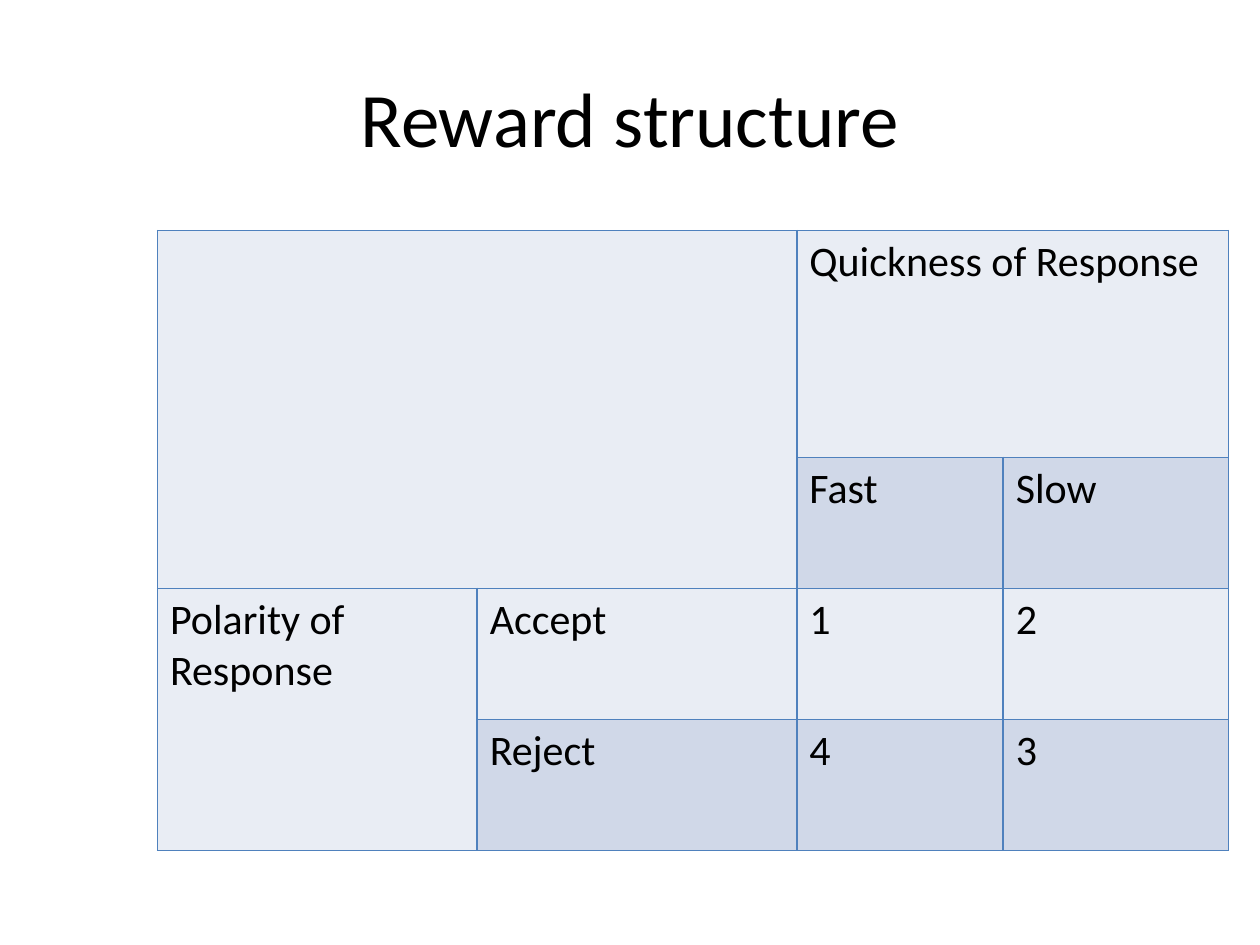
from lxml.etree import SubElement
from pptx import Presentation
from pptx.dml.color import RGBColor
from pptx.enum.text import MSO_ANCHOR, PP_ALIGN
from pptx.oxml.ns import qn
from pptx.util import Inches, Pt

COLORS = {"text": "000000", "border": "4F81BD", "light": "E9EDF4", "dark": "D0D8E8"}
FONT = "Calibri"
COLUMN_WIDTHS = [2.54, 2.54, 1.64, 1.79]
ROW_HEIGHTS = [1.8, 1.04, 1.04, 1.04]
MERGES = [((0, 0), (1, 1)), ((0, 2), (0, 3)), ((2, 0), (3, 0))]
REWARDS = [
    ["", "", "Quickness of Response", ""],
    ["", "", "Fast", "Slow"],
    ["Polarity of Response", "Accept", "1", "2"],
    ["", "Reject", "4", "3"],
]


def add_span(para, text, size):
    span = para.add_run()
    span.text = text
    span.font.name = FONT
    span.font.size = Pt(size)
    span.font.color.rgb = RGBColor.from_string(COLORS["text"])


def add_borders(cell):
    properties = cell._tc.get_or_add_tcPr()
    for position, side in enumerate(("a:lnL", "a:lnR", "a:lnT", "a:lnB")):
        line = SubElement(properties, qn(side), w=str(Pt(1)))
        fill = SubElement(line, qn("a:solidFill"))
        SubElement(fill, qn("a:srgbClr"), val=COLORS["border"])
        properties.insert(position, line)


def place_title(page, left, top, width, height):
    title = page.shapes.title
    title.left, title.top = Inches(left), Inches(top)
    title.width, title.height = Inches(width), Inches(height)
    title.text_frame.vertical_anchor = MSO_ANCHOR.MIDDLE
    para = title.text_frame.paragraphs[0]
    para.alignment = PP_ALIGN.CENTER
    add_span(para, "Reward structure", 44)


def place_reward_table(page, left, top, width, height):
    table = page.shapes.add_table(
        len(ROW_HEIGHTS), len(COLUMN_WIDTHS),
        Inches(left), Inches(top), Inches(width), Inches(height),
    ).table
    table.first_row = False
    table.horz_banding = False
    for column, share in zip(table.columns, COLUMN_WIDTHS):
        column.width = Inches(width * share / sum(COLUMN_WIDTHS))
    for row, share in zip(table.rows, ROW_HEIGHTS):
        row.height = Inches(height * share / sum(ROW_HEIGHTS))
    for first, last in MERGES:
        table.cell(*first).merge(table.cell(*last))
    for row_index, texts in enumerate(REWARDS):
        band = "dark" if row_index % 2 else "light"
        for column_index, text in enumerate(texts):
            cell = table.cell(row_index, column_index)
            cell.fill.solid()
            cell.fill.fore_color.rgb = RGBColor.from_string(COLORS[band])
            add_borders(cell)
            if text:
                add_span(cell.text_frame.paragraphs[0], text, 24)


def main():
    deck = Presentation()
    deck.slide_width, deck.slide_height = Inches(10), Inches(7.5)
    page = deck.slides.add_slide(deck.slide_layouts[5])
    place_title(page, 0.5, 0.3, 9, 1.25)
    place_reward_table(page, 1.25, 1.83, 8.5, 4.92)
    deck.save("out.pptx")


if __name__ == "__main__":
    main()
